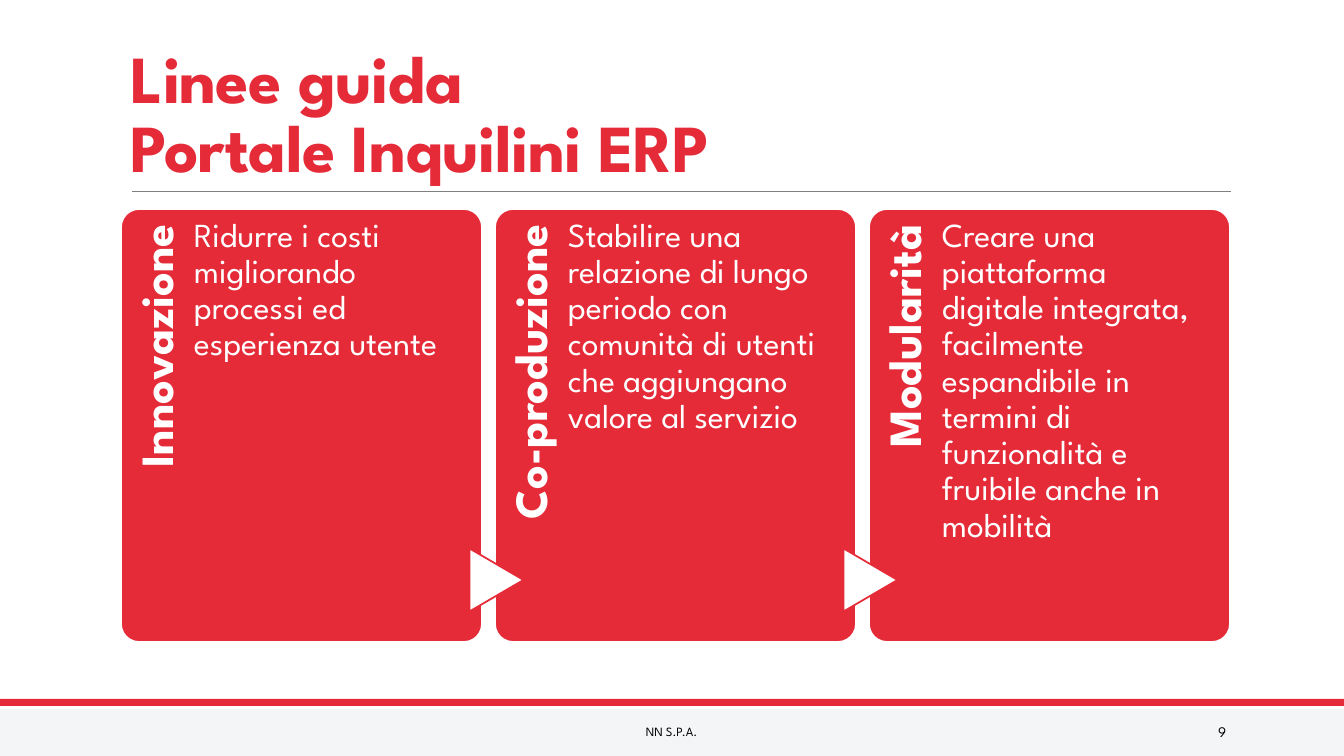
from dataclasses import dataclass

from lxml.etree import SubElement
from pptx import Presentation
from pptx.dml.color import RGBColor as RGB
from pptx.enum.shapes import MSO_CONNECTOR as CONN, MSO_SHAPE as SHAPE
from pptx.enum.text import MSO_ANCHOR as ANCHOR, MSO_AUTO_SIZE as FIT, PP_ALIGN as ALIGN
from pptx.oxml.ns import qn
from pptx.util import Emu, Pt

EMU_PER_PX = 12192000 / 1344


def px(n):
    return Emu(round(n * EMU_PER_PX))


@dataclass(frozen=True)
class Theme:
    font: str = "League Spartan"
    red: RGB = RGB(0xE5, 0x2A, 0x38)
    white: RGB = RGB(255, 255, 255)
    black: RGB = RGB(0, 0, 0)
    band: RGB = RGB(0xF4, 0xF5, 0xF7)
    rule: RGB = RGB(0x80, 0x80, 0x80)
    title: float = 48
    label: float = 33
    body: float = 24
    footer: float = 9
    number: float = 10.5
    outline: float = 1.25
    hairline: float = 0.5


class SlideBuilder:
    def __init__(self, slide, theme):
        self.s, self.theme = slide, theme

    def set_text(self, sp, text, size, color, bold=False, align=ALIGN.LEFT,
                 anchor=ANCHOR.TOP, spacing=1.0, insets=(10, 5, 10, 5)):
        tf = sp.text_frame
        tf.auto_size, tf.word_wrap, tf.vertical_anchor = FIT.NONE, True, anchor
        tf.margin_left, tf.margin_top, tf.margin_right, tf.margin_bottom = map(px, insets)
        p = tf.paragraphs[0]
        p.text, p.alignment, p.line_spacing = text, align, spacing
        f = p.font
        f.name, f.size, f.bold = self.theme.font, Pt(size), bold
        f.color.rgb = color
        return p

    def title(self, text, *box):
        sp = self.s.shapes.title
        sp.left, sp.top, sp.width, sp.height = map(px, box)
        p = self.set_text(sp, text, self.theme.title, self.theme.red, bold=True,
                          anchor=ANCHOR.BOTTOM, spacing=0.85)
        for r in p.runs:
            r.font._element.set("spc", "-50")

    def text(self, text, box, size, color, rotation=0, **style):
        sp = self.s.shapes.add_textbox(*map(px, box))
        sp.rotation = rotation
        self.set_text(sp, text, size, color, **style)

    def shape(self, kind, box, fill, line=None, rotation=0):
        sp = self.s.shapes.add_shape(kind, *map(px, box))
        sp.shadow.inherit = False
        sp.rotation = rotation
        sp.fill.solid()
        sp.fill.fore_color.rgb = fill
        if line is None:
            sp.line.fill.background()
        else:
            sp.line.color.rgb, sp.line.width = line, Pt(self.theme.outline)
        return sp

    def rule(self, x1, x2, y):
        line = self.s.shapes.add_connector(CONN.STRAIGHT, px(x1), px(y), px(x2), px(y))
        line.line.color.rgb, line.line.width = self.theme.rule, Pt(self.theme.hairline)
        SubElement(line._element.spPr, qn("a:effectLst"))

    def card(self, x, label, body, arrow):
        t = self.theme
        sp = self.shape(SHAPE.ROUNDED_RECTANGLE, (x, 209, 361, 433), t.red, t.white)
        sp.adjustments[0] = 0.05
        self.text(label, (x - 141, 350, 356, 73), t.label, t.white, rotation=270,
                  bold=True, align=ALIGN.RIGHT, spacing=0.9, insets=(0, 12, 16, 0))
        if arrow:
            self.shape(SHAPE.FLOWCHART_EXTRACT, (x - 30, 553, 63, 54),
                       t.white, t.red, rotation=90)
        self.text(body, (x + 73, 209, 269, 433), t.body, t.white,
                  spacing=0.9, insets=(0, 9, 0, 0))


CARDS = [
    ("Innovazione", "Ridurre i costi migliorando processi ed esperienza utente"),
    ("Co-produzione", "Stabilire una relazione di lungo periodo con comunità di utenti "
                      "che aggiungano valore al servizio"),
    ("Modularità", "Creare una piattaforma digitale integrata, facilmente espandibile "
                   "in termini di funzionalità e fruibile anche in mobilità"),
]
CARD_LEFT, CARD_PITCH = 121, 374


def main():
    prs = Presentation()
    prs.slide_width, prs.slide_height = px(1344), px(756)
    theme = Theme()
    page = SlideBuilder(prs.slides.add_slide(prs.slide_layouts[5]), theme)

    # Footer bands, title and rule
    page.shape(SHAPE.RECTANGLE, (0, 709, 1344, 47), theme.band)
    page.shape(SHAPE.RECTANGLE, (0, 699, 1344, 7), theme.red)
    page.rule(132, 1231, 191)
    page.title("Linee guida\vPortale Inquilini ERP", 121, 31, 1109, 160)

    # Guideline cards, each after the first entered by an arrow
    for i, (label, body) in enumerate(CARDS):
        page.card(CARD_LEFT + i * CARD_PITCH, label, body, arrow=i > 0)

    # Footer text
    page.text("NN S.P.A.", (406, 712, 531, 40), theme.footer, theme.black,
              align=ALIGN.CENTER, anchor=ANCHOR.MIDDLE)
    page.text("9", (1092, 712, 144, 40), theme.number, theme.black,
              align=ALIGN.RIGHT, anchor=ANCHOR.MIDDLE)

    prs.save("out.pptx")


if __name__ == "__main__":
    main()
